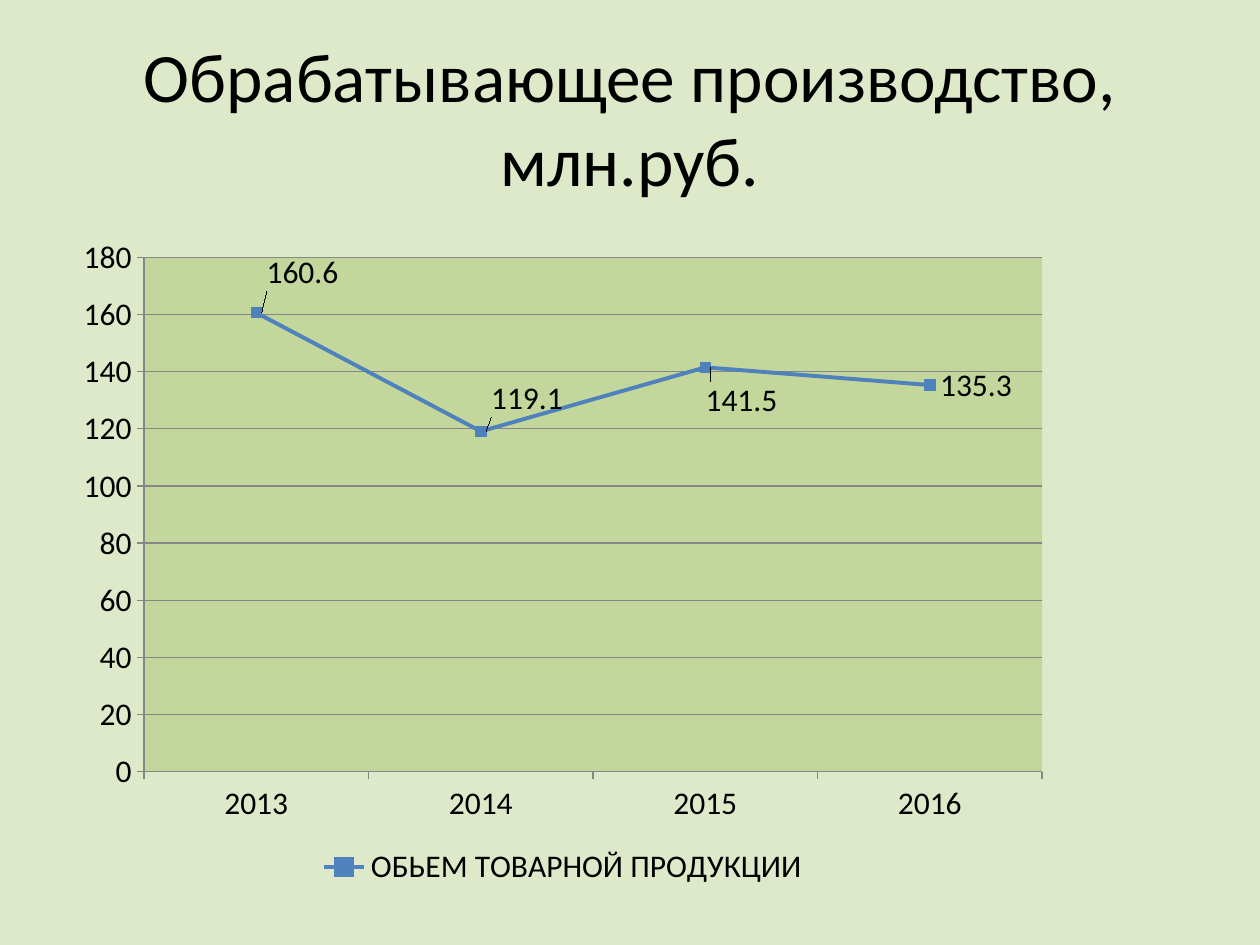
from dataclasses import dataclass

import pptx
import pptx.chart.data
import pptx.dml.color
import pptx.enum.chart
import pptx.enum.text
import pptx.oxml
import pptx.oxml.ns
import pptx.util


@dataclass(frozen=True)
class Theme:
    font: str = "Calibri"
    title_size: float = 39.6
    chart_size: float = 18
    text: str = "000000"
    background: str = "DEE9C9"
    plot: str = "C3D69B"
    series: str = "4F81BD"
    grid: str = "868686"


@dataclass(frozen=True)
class Box:
    """Left, top, width and height as shares of the enclosing area."""
    left: float
    top: float
    width: float
    height: float


@dataclass(frozen=True)
class YearOutput:
    year: str
    value: float
    label_shift: tuple[float, float] = (0, 0)


THEME = Theme()
SLIDE_WIDTH, SLIDE_HEIGHT = pptx.util.Inches(10), pptx.util.Inches(7.5)
TITLE_BOX = Box(0.05, 0.04, 0.9, 0.167)
CHART_BOX = Box(0.051, 0.237, 0.792, 0.707)
PLOT_BOX = Box(0.08, 0.05, 0.9, 0.77)
TITLE = "Обрабатывающее производство, млн.руб."
SERIES_NAME = "ОБЬЕМ ТОВАРНОЙ ПРОДУКЦИИ"
OUTPUTS = [
    YearOutput("2013", 160.6, (0, -0.06)),
    YearOutput("2014", 119.1, (0, -0.05)),
    YearOutput("2015", 141.5, (-0.01, 0.05)),
    YearOutput("2016", 135.3),
]


def color(value: str) -> pptx.dml.color.RGBColor:
    return pptx.dml.color.RGBColor.from_string(value)


def place(box: Box) -> tuple[int, int, int, int]:
    return (int(box.left * SLIDE_WIDTH), int(box.top * SLIDE_HEIGHT),
            int(box.width * SLIDE_WIDTH), int(box.height * SLIDE_HEIGHT))


def style_font(font, size: float) -> None:
    font.name = THEME.font
    font.size = pptx.util.Pt(size)
    font.color.rgb = color(THEME.text)


def manual_layout(settings: dict[str, object]):
    """Return a c:layout element holding the given manual settings."""
    entries = "".join(f'<c:{name} val="{value}"/>' for name, value in settings.items())
    return pptx.oxml.parse_xml(
        f'<c:layout {pptx.oxml.ns.nsdecls("c")}>'
        f"<c:manualLayout>{entries}</c:manualLayout></c:layout>")


def add_title(slide) -> None:
    frame = slide.shapes.add_textbox(*place(TITLE_BOX)).text_frame
    frame.word_wrap = True
    frame.vertical_anchor = pptx.enum.text.MSO_ANCHOR.MIDDLE
    paragraph = frame.paragraphs[0]
    paragraph.alignment = pptx.enum.text.PP_ALIGN.CENTER
    run = paragraph.add_run()
    run.text = TITLE
    style_font(run.font, THEME.title_size)


def style_plot_area(chart) -> None:
    plot_area = chart.plots[0]._element.getparent()
    for layout in plot_area.findall(pptx.oxml.ns.qn("c:layout")):
        plot_area.remove(layout)
    plot_area.insert(0, manual_layout({
        "layoutTarget": "inner", "xMode": "edge", "yMode": "edge",
        "x": PLOT_BOX.left, "y": PLOT_BOX.top,
        "w": PLOT_BOX.width, "h": PLOT_BOX.height}))
    plot_area.append(pptx.oxml.parse_xml(
        f'<c:spPr {pptx.oxml.ns.nsdecls("c", "a")}><a:solidFill>'
        f'<a:srgbClr val="{THEME.plot}"/></a:solidFill></c:spPr>'))


def style_axes(chart) -> None:
    chart.value_axis.has_major_gridlines = True
    chart.value_axis.minimum_scale = 0
    chart.value_axis.maximum_scale = 180
    chart.value_axis.major_unit = 20
    lines = [chart.value_axis.major_gridlines.format.line]
    for axis in (chart.category_axis, chart.value_axis):
        axis.major_tick_mark = pptx.enum.chart.XL_TICK_MARK.OUTSIDE
        lines.append(axis.format.line)
    for line in lines:
        line.color.rgb = color(THEME.grid)
        line.width = pptx.util.Pt(0.75)


def style_series(series) -> None:
    series.smooth = False
    series.format.line.color.rgb = color(THEME.series)
    series.format.line.width = pptx.util.Pt(2.25)
    marker = series.marker
    marker.style = pptx.enum.chart.XL_MARKER_STYLE.SQUARE
    marker.size = 6
    marker.format.fill.solid()
    marker.format.fill.fore_color.rgb = color(THEME.series)
    marker.format.line.color.rgb = color(THEME.series)


def add_value_labels(series) -> None:
    right = pptx.enum.chart.XL_LABEL_POSITION.RIGHT
    labels = series.data_labels
    labels.show_value = True
    labels.position = right
    style_font(labels.font, THEME.chart_size)
    for index, output in enumerate(OUTPUTS):
        if not any(output.label_shift):
            continue
        label = series.points[index].data_label
        label.position = right
        style_font(label.font, THEME.chart_size)
        element = labels._element.xpath(f"c:dLbl[c:idx/@val='{index}']")[0]
        shift_x, shift_y = output.label_shift
        element.insert(1, manual_layout({"x": shift_x, "y": shift_y}))


def add_output_chart(slide) -> None:
    data = pptx.chart.data.CategoryChartData()
    data.categories = [output.year for output in OUTPUTS]
    data.add_series(SERIES_NAME, [output.value for output in OUTPUTS])
    chart = slide.shapes.add_chart(
        pptx.enum.chart.XL_CHART_TYPE.LINE_MARKERS, *place(CHART_BOX), data).chart
    style_font(chart.font, THEME.chart_size)
    chart.has_title = False
    chart.has_legend = True
    chart.legend.position = pptx.enum.chart.XL_LEGEND_POSITION.BOTTOM
    chart.legend.include_in_layout = False
    chart.plots[0].vary_by_categories = False
    style_plot_area(chart)
    style_axes(chart)
    series = chart.plots[0].series[0]
    style_series(series)
    add_value_labels(series)


def main() -> None:
    presentation = pptx.Presentation()
    presentation.slide_width, presentation.slide_height = SLIDE_WIDTH, SLIDE_HEIGHT
    slide = presentation.slides.add_slide(presentation.slide_layouts[6])
    slide.background.fill.solid()
    slide.background.fill.fore_color.rgb = color(THEME.background)
    add_title(slide)
    add_output_chart(slide)
    presentation.save("out.pptx")


if __name__ == "__main__":
    main()
